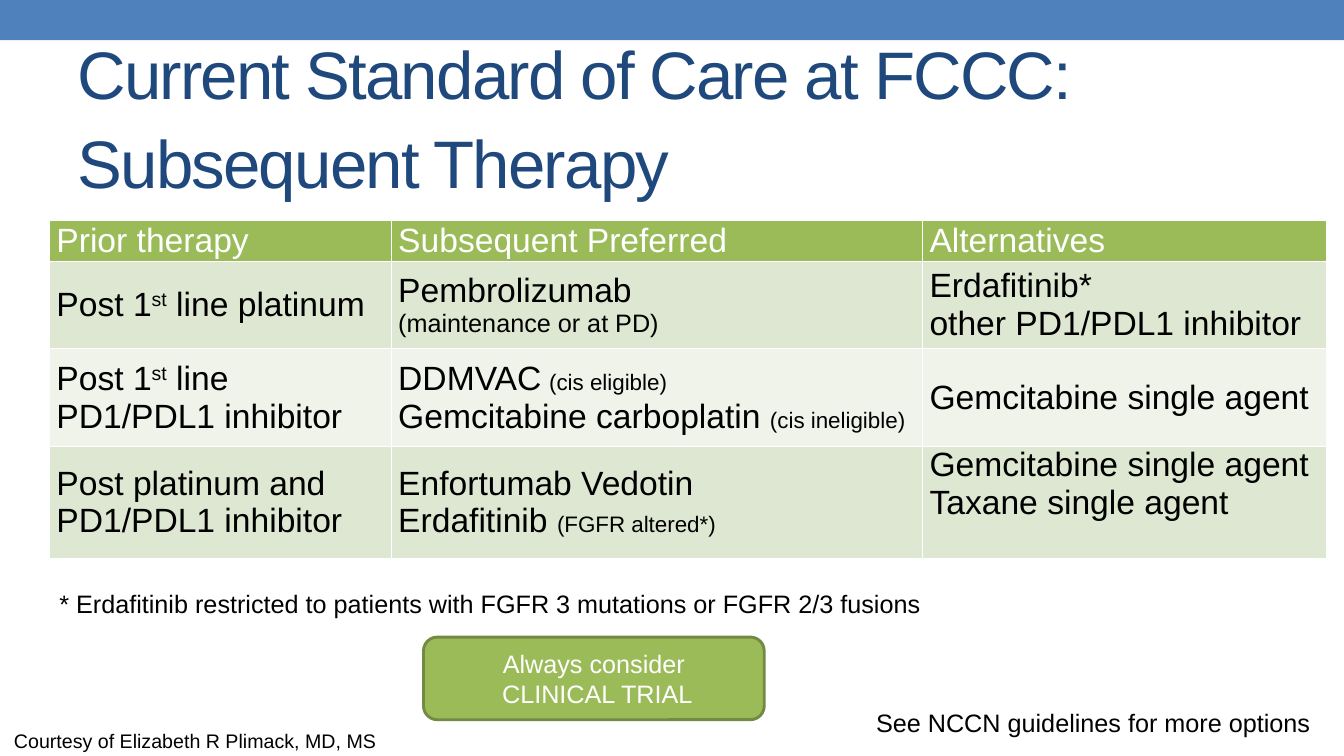
from dataclasses import dataclass

from pptx import Presentation
from pptx.dml.color import RGBColor as RGB
from pptx.enum.shapes import MSO_SHAPE as Shape
from pptx.enum.text import MSO_ANCHOR as Anchor, PP_ALIGN as Align
from pptx.oxml import parse_xml
from pptx.oxml.ns import nsdecls
from pptx.util import Inches, Pt


@dataclass(frozen=True)
class Theme:
    face: str = "Arial"
    blue: str = "4F81BD"
    navy: str = "1F497D"
    green: str = "9BBB59"
    moss: str = "738A42"
    bands: tuple = ("DEE7D1", "EFF3EA")
    black: str = "000000"
    white: str = "FFFFFF"
    title: int = 48
    cell: int = 24
    note: int = 18
    small: int = 16
    credit: int = 14


class Deck:
    def __init__(self, theme):
        self.theme = theme
        self.file = Presentation()
        self.file.slide_width, self.file.slide_height = Inches(13.33), Inches(7.5)
        self.slide = self.file.slides.add_slide(self.file.slide_layouts[6])

    def style(self, para, size, color):
        font = para.font
        font.name, font.size = self.theme.face, Pt(size)
        font.color.rgb = RGB.from_string(color)

    def fill(self, item, color):
        item.fill.solid()
        item.fill.fore_color.rgb = RGB.from_string(color)

    def put(self, frame, lines, size, color, align=Align.LEFT):
        """Fill a frame; a line is a string or a list of strings and (text, mark) runs.

        A mark is a type size, or "super" for raised text.
        """
        for num, line in enumerate(lines):
            para = frame.add_paragraph() if num else frame.paragraphs[0]
            para.alignment = align
            runs = [line] if isinstance(line, str) else line
            marks = [None if isinstance(part, str) else part[1] for part in runs]
            whole = len(runs) == 1 and marks[0]
            self.style(para, whole or size, color)
            for part, mark in zip(runs, marks):
                run = para.add_run()
                run.text = part if isinstance(part, str) else part[0]
                if mark == "super":
                    run.font._element.set("baseline", "30000")
                elif mark and not whole:
                    run.font.size = Pt(mark)

    def text(self, box, line, size, color=None, wrap=False):
        frame = self.slide.shapes.add_textbox(*map(Inches, box)).text_frame
        frame.word_wrap = wrap
        self.put(frame, [line], size, color or self.theme.black)
        return frame

    def head(self, box, line):
        frame = self.text(box, line, self.theme.title, self.theme.navy, wrap=True)
        frame.vertical_anchor = Anchor.MIDDLE
        para = frame.paragraphs[0]
        para.line_spacing = 1.1
        para.runs[0].font._element.set("spc", "-130")

    def block(self, kind, box, color, edge=None, lines=()):
        shape = self.slide.shapes.add_shape(kind, *map(Inches, box))
        shape.shadow.inherit = False
        self.fill(shape, color)
        if edge:
            shape.line.color.rgb = RGB.from_string(edge)
            shape.line.width = Pt(2.08)
        else:
            shape.line.fill.background()
        if lines:
            frame = shape.text_frame
            frame.vertical_anchor = Anchor.MIDDLE
            self.put(frame, lines, self.theme.note, self.theme.white, Align.CENTER)

    def edges(self, cell):
        for side in "LRTB":
            cell._tc.get_or_add_tcPr().append(parse_xml(
                f'<a:ln{side} {nsdecls("a")} w="12700"><a:solidFill>'
                f'<a:srgbClr val="{self.theme.white}"/></a:solidFill></a:ln{side}>'))

    def table(self, left, top, wides, highs, rows):
        theme = self.theme
        box = left, top, sum(wides), sum(highs)
        grid = self.slide.shapes.add_table(
            len(rows), len(wides), *map(Inches, box)).table
        grid.first_row = grid.horz_banding = False
        for col, wide in zip(grid.columns, wides):
            col.width = Inches(wide)
        for num, (row, high) in enumerate(zip(grid.rows, highs)):
            row.height = Inches(high)
            back = theme.bands[(num - 1) % 2] if num else theme.green
            color = theme.black if num else theme.white
            for cell, lines in zip(row.cells, rows[num]):
                cell.margin_left = cell.margin_right = Inches(0.07)
                cell.margin_top = cell.margin_bottom = 0
                cell.vertical_anchor = Anchor.MIDDLE
                self.edges(cell)
                self.fill(cell, back)
                self.put(cell.text_frame, lines, theme.cell, color)
        return grid


def main():
    theme = Theme()
    deck = Deck(theme)
    small = theme.small
    rows = [
        [["Prior therapy"], ["Subsequent Preferred"], ["Alternatives"]],
        [[["Post 1", ("st", "super"), " line platinum"]],
         ["Pembrolizumab", [("(maintenance or at PD)", theme.note)]],
         ["Erdafitinib*", "other PD1/PDL1 inhibitor"]],
        [[["Post 1", ("st", "super"), " line PD1/PDL1 inhibitor"]],
         [["DDMVAC", (" ", 20), ("(cis eligible)", small)],
          ["Gemcitabine carboplatin ", ("(cis ineligible)", small)]],
         ["Gemcitabine single agent"]],
        [["Post platinum and PD1/PDL1 inhibitor"],
         ["Enfortumab Vedotin", ["Erdafitinib ", ("(FGFR altered*)", small)]],
         ["Gemcitabine single agent", "Taxane single agent"]],
    ]

    deck.block(Shape.RECTANGLE, (0, 0, 13.33, 0.4), theme.blue)
    deck.head((0.67, 0.58, 12, 1.08),
              "Current Standard of Care at FCCC: Subsequent Therapy")
    grid = deck.table(0.49, 2.19, (3.39, 5.27, 4.01), (0.38, 0.87, 0.97, 1.11), rows)
    grid.cell(3, 2).vertical_anchor = Anchor.TOP
    deck.text((0.49, 5.79, 8.83, 0.4),
              "* Erdafitinib restricted to patients with FGFR 3 mutations "
              "or FGFR 2/3 fusions", theme.note)
    deck.text((8.59, 6.97, 4.55, 0.4),
              "See NCCN guidelines for more options", theme.note)
    deck.block(Shape.ROUNDED_RECTANGLE, (4.2, 6.32, 3.38, 0.82), theme.green,
               theme.moss, ["Always consider", " CLINICAL TRIAL"])
    deck.text((0.04, 7.18, 3.87, 0.32),
              "Courtesy of Elizabeth R Plimack, MD, MS", theme.credit)
    deck.file.save("out.pptx")


if __name__ == "__main__":
    main()
